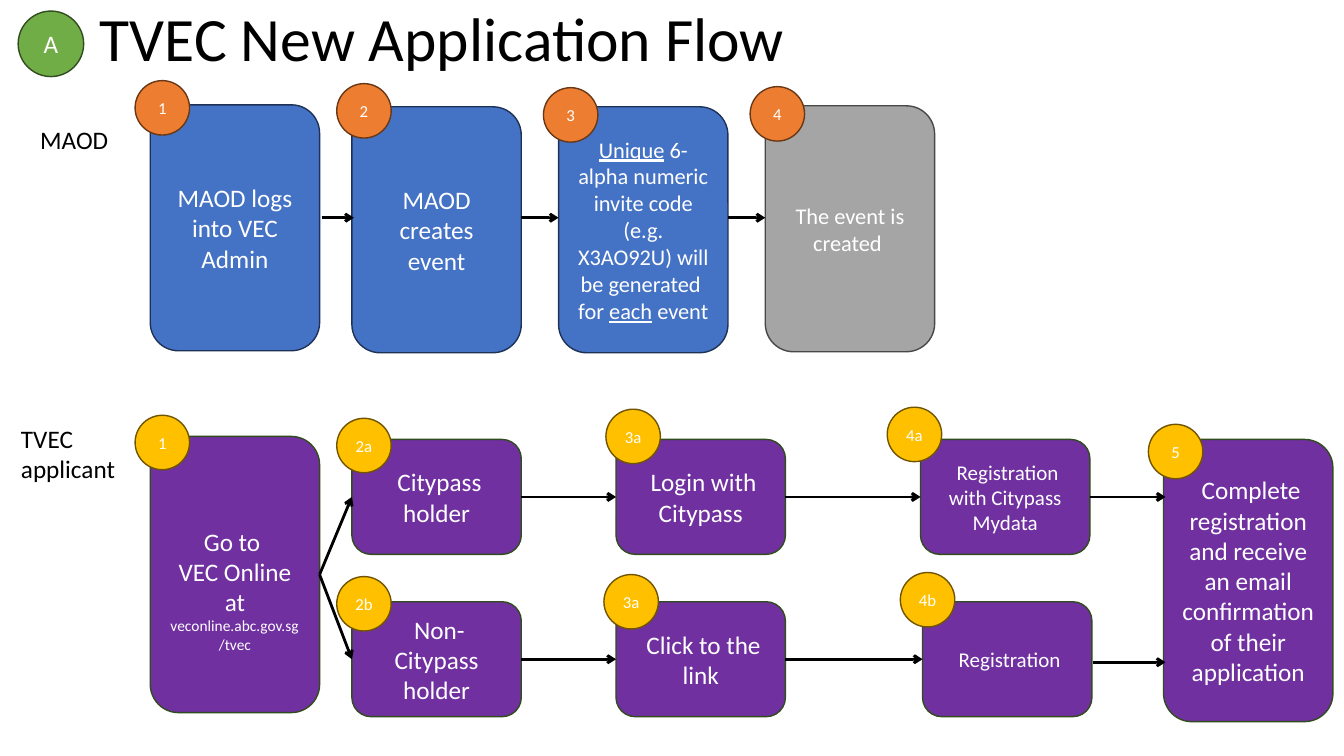
from lxml import etree
from pptx import Presentation
from pptx.dml.color import RGBColor
from pptx.enum.shapes import MSO_CONNECTOR, MSO_SHAPE
from pptx.enum.text import MSO_ANCHOR, MSO_AUTO_SIZE, PP_ALIGN
from pptx.oxml.ns import qn
from pptx.util import Emu, Pt

ROUND, OVAL = MSO_SHAPE.ROUNDED_RECTANGLE, MSO_SHAPE.OVAL
STRAIGHT = MSO_CONNECTOR.STRAIGHT
MIDDLE, TOP = MSO_ANCHOR.MIDDLE, MSO_ANCHOR.TOP
LEFT, CENTER = PP_ALIGN.LEFT, PP_ALIGN.CENTER
LEFT_SIDE, RIGHT_SIDE = 1, 3

PX = 9144  # 100 px to the inch
FONT = "Calibri"
BOX_W, BADGE = 168, 54
TALL, SHORT = 244, 114
ROW_A, ROW_B = 436, 597

COLORS = {
    "black": "000000", "white": "FFFFFF",
    "officer": "4472C4", "officer_line": "1E3256",
    "done": "A5A5A5", "done_line": "484848",
    "applicant": "7030A0", "applicant_line": "314C1F",
    "officer_badge": "ED7D31", "officer_badge_line": "683715",
    "applicant_badge": "FFC000", "applicant_badge_line": "705400",
    "section": "70AD47", "section_line": "314C1F",
}

TITLE = "TVEC New Application Flow"
LABELS = [("MAOD", 30, 118, 104, 40), ("TVEC applicant", 11, 415, 137, 71)]

# A paragraph is a list of (text, size, underlined) runs.
INVITE = [
    [("Unique", 16, True),
     (" 6-alpha numeric invite code (e.g. X3AO92U) will be generated ", 16, False)],
    [("for ", 16, False), ("each", 16, True), (" event", 16, False)],
]
GO_ONLINE = [
    [("Go to \nVEC Online at", 18, False)],
    [("veconline.abc.gov.sg/tvec", 11, False)],
]


def plain(text, size=18):
    return [[(text, size, False)]]


# name: (kind, left, top, height, paragraphs, badge text, badge left, badge top)
STEPS = {
    "log in": ("officer", 149, 104, TALL, plain("MAOD logs into VEC Admin"), "1", 134, 80),
    "create": ("officer", 349, 106, TALL, plain("MAOD creates event"), "2", 334, 83),
    "invite": ("officer", 554, 106, TALL, INVITE, "3", 539, 87),
    "created": ("done", 759, 105, TALL, plain("The event is created ", 16), "4", 744, 86),
    "go online": ("applicant", 149, 433, 274, GO_ONLINE, "1", 134, 412),
    "holder": ("applicant", 349, ROW_A, SHORT, plain(" Citypass holder"), "2a", 334, 415),
    "non-holder": ("applicant", 349, ROW_B, SHORT, plain(" Non-Citypass holder"), "2b", 334, 572),
    "login": ("applicant", 611, ROW_A, SHORT, plain(" Login with Citypass"), "3a", 601, 406),
    "link": ("applicant", 611, ROW_B, SHORT, plain(" Click to the link"), "3a", 599, 570),
    "register with data": ("applicant", 913, ROW_A, SHORT,
                           plain(" Registration with Citypass Mydata", 15), "4a", 880, 404),
    "register": ("applicant", 915, ROW_B, SHORT, plain(" Registration", 15), "4b", 893, 568),
    "complete": ("applicant", 1154, ROW_A, 280,
                 plain(" Complete registration and receive an email confirmation"
                       " of their application"), "5", 1139, 421),
}
EXTRA_TOP_INSET = {"go online": 35}

# Each end is a step name (middle of its side) or a point.
ARROWS = [
    ((319, 216), (351, 216)), ((517, 216), (554, 216)), ((722, 216), (759, 216)),
    ("go online", "holder"), ("go online", "non-holder"),
    ("holder", "login"), ("login", "register with data"),
    ("non-holder", "link"), ("link", "register"),
    ("register with data", (1156, 493)), ((1084, 657), (1156, 657)),
]


def rgb(name):
    return RGBColor.from_string(COLORS[name])


def emu(*px):
    return [Emu(v * PX) for v in px]


def write(tf, paragraphs, color, align, anchor):
    for key, value in {"word_wrap": True, "vertical_anchor": anchor}.items():
        setattr(tf, key, value)
    for i, runs in enumerate(paragraphs):
        p = tf.add_paragraph() if i else tf.paragraphs[0]
        p.alignment = align
        for text, size, underlined in runs:
            for j, line in enumerate(text.split("\n")):
                if j:
                    p.add_line_break()
                r = p.add_run()
                r.text = line
                r.font.color.rgb = rgb(color)
                fmt = {"name": FONT, "size": Pt(size), "underline": underlined}
                for key, value in fmt.items():
                    setattr(r.font, key, value)


def add_node(s, preset, kind, box, paragraphs):
    """Add a filled, outlined shape with centred white text."""
    sp = s.shapes.add_shape(preset, *emu(*box))
    sp.shadow.inherit = False
    sp.fill.solid()
    sp.fill.fore_color.rgb = rgb(kind)
    sp.line.color.rgb = rgb(kind + "_line")
    sp.line.width = Pt(1)
    write(sp.text_frame, paragraphs, "white", CENTER, MIDDLE)
    return sp


def add_arrow(s, start, end, nodes):
    ends = [(0, 0) if isinstance(e, str) else e for e in (start, end)]
    cxn = s.shapes.add_connector(STRAIGHT, *emu(*ends[0], *ends[1]))
    if isinstance(start, str):
        cxn.begin_connect(nodes[start], RIGHT_SIDE)
    if isinstance(end, str):
        cxn.end_connect(nodes[end], LEFT_SIDE)
    cxn.line.color.rgb = rgb("black")
    cxn.line.width = Pt(2)
    etree.SubElement(cxn.line._get_or_add_ln(), qn("a:tailEnd"), type="arrow")
    etree.SubElement(cxn._element.spPr, qn("a:effectLst"))


def main():
    prs = Presentation()
    prs.slide_width, prs.slide_height = emu(1333, 750)
    s = prs.slides.add_slide(prs.slide_layouts[5])

    title = s.shapes.title
    title.left, title.top, title.width, title.height = emu(89, 1, 1150, 80)
    title.text_frame.auto_size = MSO_AUTO_SIZE.NONE
    write(title.text_frame, plain(TITLE, 44), "black", LEFT, MIDDLE)
    title.text_frame.paragraphs[0].line_spacing = 0.9

    add_node(s, OVAL, "section", (18, 11, 65, 65), plain("A"))
    for text, *box in LABELS:
        tb = s.shapes.add_textbox(*emu(*box))
        write(tb.text_frame, plain(text), "black", LEFT, TOP)

    nodes = {}
    for name, (kind, x, y, h, paragraphs, number, bx, by) in STEPS.items():
        nodes[name] = add_node(s, ROUND, kind, (x, y, BOX_W, h), paragraphs)
        badge = "applicant_badge" if kind == "applicant" else "officer_badge"
        add_node(s, OVAL, badge, (bx, by, BADGE, BADGE), plain(number, 12))
    for name, inset in EXTRA_TOP_INSET.items():
        nodes[name].text_frame.margin_top = Emu(inset * PX)

    for start, end in ARROWS:
        add_arrow(s, start, end, nodes)

    prs.save("out.pptx")


if __name__ == "__main__":
    main()
